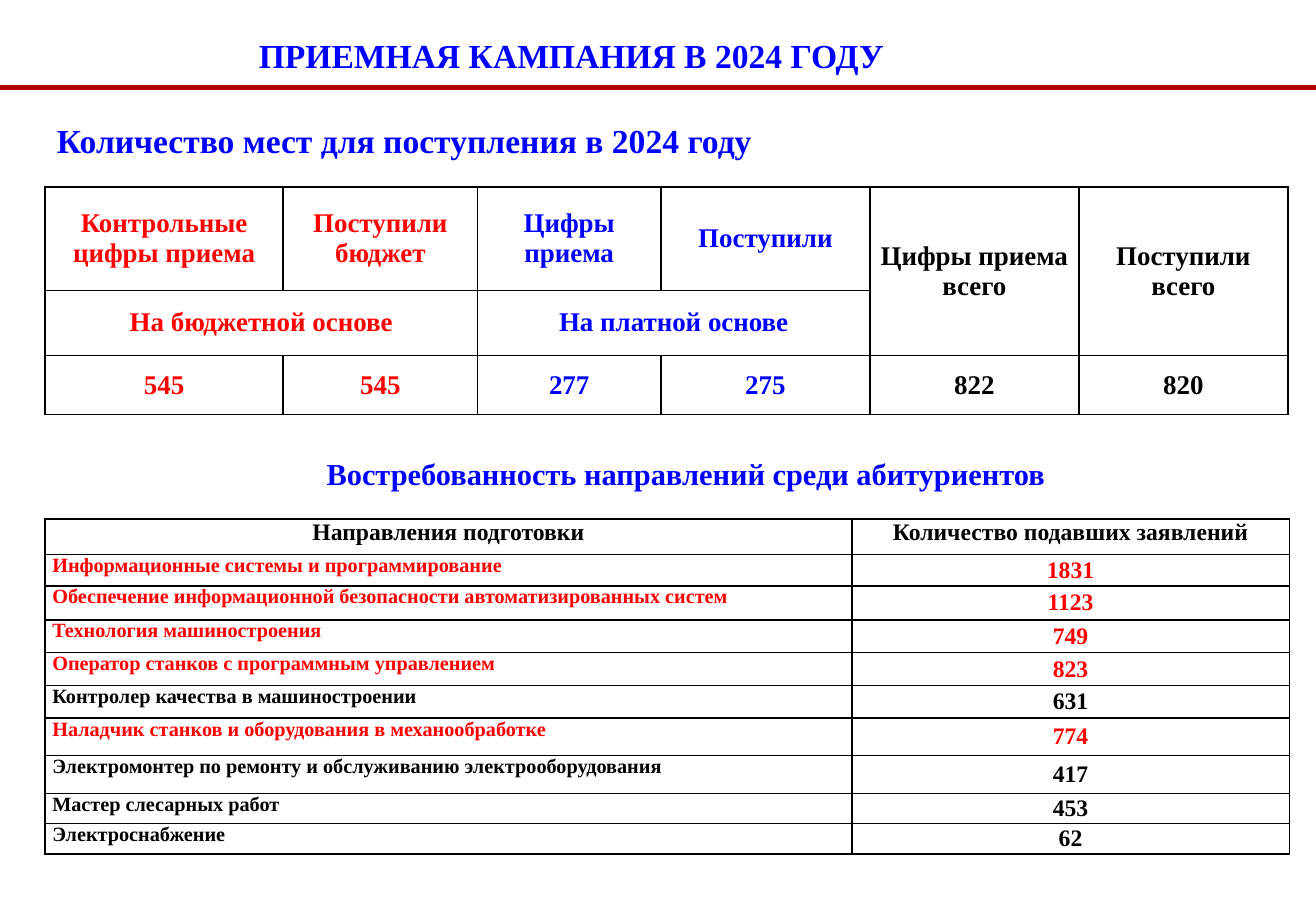
import dataclasses

import lxml.etree
import pptx
import pptx.dml.color
import pptx.enum.shapes
import pptx.enum.text
import pptx.oxml.ns
import pptx.presentation
import pptx.shapes.autoshape
import pptx.slide
import pptx.table
import pptx.text.text
import pptx.util

RGBColor = pptx.dml.color.RGBColor
Align = pptx.enum.text.PP_ALIGN
Anchor = pptx.enum.text.MSO_ANCHOR

WIDTH = pptx.util.Inches(10.83)
HEIGHT = pptx.util.Inches(7.48)
FONT = "Times New Roman"
BLUE = RGBColor(0x00, 0x00, 0xFF)
RED = RGBColor(0xFF, 0x00, 0x00)
BLACK = RGBColor(0x00, 0x00, 0x00)
WHITE = RGBColor(0xFF, 0xFF, 0xFF)
DARK_RED = RGBColor(0xB0, 0x00, 0x00)
LEFT_MARGIN = 3.42


@dataclasses.dataclass(frozen=True)
class Area:
    """Percentages of the slide's width and height."""
    left: float
    top: float
    width: float
    height: float


@dataclasses.dataclass(frozen=True)
class Heading:
    text: str
    area: Area
    size: float
    alignment: Align
    anchor: Anchor = Anchor.TOP
    line_spacing: float = 1.0
    filled: bool = False


@dataclasses.dataclass(frozen=True)
class CellText:
    row: int
    column: int
    text: str
    color: RGBColor
    size: float = 16
    alignment: Align = Align.CENTER
    anchor: Anchor = Anchor.MIDDLE
    row_span: int = 1
    column_span: int = 1


@dataclasses.dataclass(frozen=True)
class Grid:
    top: float
    columns: list[float]
    rows: list[float]
    inset: float
    cells: list[CellText]


@dataclasses.dataclass(frozen=True)
class Programme:
    name: str
    applications: int
    color: RGBColor


HEADINGS = [
    Heading("ПРИЕМНАЯ КАМПАНИЯ В 2024 ГОДУ", Area(7.2, 0.94, 72.48, 7.22),
            19.9, Align.CENTER, line_spacing=1.5),
    Heading("Количество мест для поступления в 2024 году",
            Area(LEFT_MARGIN, 12.57, 70.36, 5.88), 19.9, Align.LEFT),
    Heading("Востребованность направлений среди абитуриентов",
            Area(4.8, 50, 94.64, 4.14), 18, Align.CENTER, Anchor.MIDDLE, filled=True),
]

PLACES = [
    CellText(0, 0, "Контрольные цифры приема", RED),
    CellText(0, 1, "Поступили бюджет", RED),
    CellText(0, 2, "Цифры приема", BLUE),
    CellText(0, 3, "Поступили", BLUE),
    CellText(0, 4, "Цифры приема всего", BLACK, row_span=2),
    CellText(0, 5, "Поступили всего", BLACK, row_span=2),
    CellText(1, 0, "На бюджетной основе", RED, column_span=2),
    CellText(1, 2, "На платной основе", BLUE, column_span=2),
    CellText(2, 0, "545", RED),
    CellText(2, 1, "545", RED),
    CellText(2, 2, "277", BLUE),
    CellText(2, 3, "275", BLUE),
    CellText(2, 4, "822", BLACK),
    CellText(2, 5, "820", BLACK),
]

PROGRAMMES = [
    Programme("Информационные системы и программирование", 1831, RED),
    Programme("Обеспечение информационной безопасности автоматизированных систем", 1123, RED),
    Programme("Технология машиностроения", 749, RED),
    Programme("Оператор станков с программным управлением", 823, RED),
    Programme("Контролер качества в машиностроении", 631, BLACK),
    Programme("Наладчик станков и оборудования в механообработке", 774, RED),
    Programme("Электромонтер по ремонту и обслуживанию электрооборудования", 417, BLACK),
    Programme("Мастер слесарных работ", 453, BLACK),
    Programme("Электроснабжение", 62, BLACK),
]


def across(percent: float) -> int:
    return round(WIDTH * percent / 100)


def down(percent: float) -> int:
    return round(HEIGHT * percent / 100)


def write(paragraph: pptx.text.text._Paragraph, text: str, size: float,
          color: RGBColor, alignment: Align) -> None:
    paragraph.text = text
    paragraph.alignment = alignment
    paragraph.font.name = FONT
    paragraph.font.size = pptx.util.Pt(size)
    paragraph.font.bold = True
    paragraph.font.color.rgb = color


def draw_rule(slide: pptx.slide.Slide) -> None:
    height = down(9.63)
    rule = slide.shapes.add_connector(
        pptx.enum.shapes.MSO_CONNECTOR.STRAIGHT, 0, height, WIDTH, height)
    rule.line.color.rgb = DARK_RED
    rule.line.width = pptx.util.Pt(2.5)
    properties = rule._element.spPr
    lxml.etree.SubElement(properties, pptx.oxml.ns.qn("a:effectLst"))


def draw_heading(slide: pptx.slide.Slide, heading: Heading) -> None:
    area = heading.area
    box = (across(area.left), down(area.top), across(area.width), down(area.height))
    if heading.filled:
        shape = slide.shapes.add_shape(pptx.enum.shapes.MSO_SHAPE.RECTANGLE, *box)
        shape.shadow.inherit = False
        shape.fill.solid()
        shape.fill.fore_color.rgb = WHITE
        shape.line.color.rgb = WHITE
        shape.line.width = pptx.util.Pt(2)
    else:
        shape = slide.shapes.add_textbox(*box)
    frame = shape.text_frame
    frame.word_wrap = True
    frame.vertical_anchor = heading.anchor
    paragraph = frame.paragraphs[0]
    write(paragraph, heading.text, heading.size, BLUE, heading.alignment)
    paragraph.line_spacing = heading.line_spacing


def prepare_cell(cell: pptx.table._Cell, inset: float) -> None:
    cell.margin_left = cell.margin_right = pptx.util.Inches(inset)
    cell.margin_top = cell.margin_bottom = 0
    cell.fill.background()
    properties = cell._tc.get_or_add_tcPr()
    for index, side in enumerate(("lnL", "lnR", "lnT", "lnB")):
        border = lxml.etree.Element(pptx.oxml.ns.qn(f"a:{side}"), w=str(pptx.util.Pt(1)))
        fill = lxml.etree.SubElement(border, pptx.oxml.ns.qn("a:solidFill"))
        lxml.etree.SubElement(fill, pptx.oxml.ns.qn("a:srgbClr"), val=str(BLACK))
        properties.insert(index, border)


def draw_grid(slide: pptx.slide.Slide, grid: Grid) -> None:
    table = slide.shapes.add_table(
        len(grid.rows), len(grid.columns), across(LEFT_MARGIN), down(grid.top),
        across(sum(grid.columns)), down(sum(grid.rows))).table
    table.first_row = table.horz_banding = False
    for column, width in zip(table.columns, grid.columns):
        column.width = across(width)
    for row, height in zip(table.rows, grid.rows):
        row.height = down(height)
    for cell in table.iter_cells():
        prepare_cell(cell, grid.inset)
    for item in grid.cells:
        cell = table.cell(item.row, item.column)
        if item.row_span > 1 or item.column_span > 1:
            cell.merge(table.cell(item.row + item.row_span - 1,
                                  item.column + item.column_span - 1))
        cell.vertical_anchor = item.anchor
        write(cell.text_frame.paragraphs[0], item.text, item.size, item.color, item.alignment)


def demand_cells() -> list[CellText]:
    cells = [CellText(0, column, text, BLACK, 14, anchor=Anchor.TOP) for column, text
             in enumerate(("Направления подготовки", "Количество подавших заявлений"))]
    for row, programme in enumerate(PROGRAMMES, start=1):
        cells.append(CellText(row, 0, programme.name, programme.color, 12,
                              Align.LEFT, Anchor.TOP))
        cells.append(CellText(row, 1, str(programme.applications), programme.color, 14))
    return cells


def main() -> None:
    presentation = pptx.Presentation()
    presentation.slide_width = WIDTH
    presentation.slide_height = HEIGHT
    slide = presentation.slides.add_slide(presentation.slide_layouts[6])
    draw_rule(slide)
    for heading in HEADINGS:
        draw_heading(slide, heading)
    draw_grid(slide, Grid(20.59, [18.1, 14.77, 13.94] + [15.88] * 3,
                          [11.36, 7.09, 6.55], 0.05, PLACES))
    draw_grid(slide, Grid(57.09, [61.31, 33.24],
                          [3.88, 3.48, 3.74] + [3.61] * 3 + [4.14] * 2 + [3.34] * 2,
                          0.06, demand_cells()))
    presentation.save("out.pptx")


if __name__ == "__main__":
    main()
